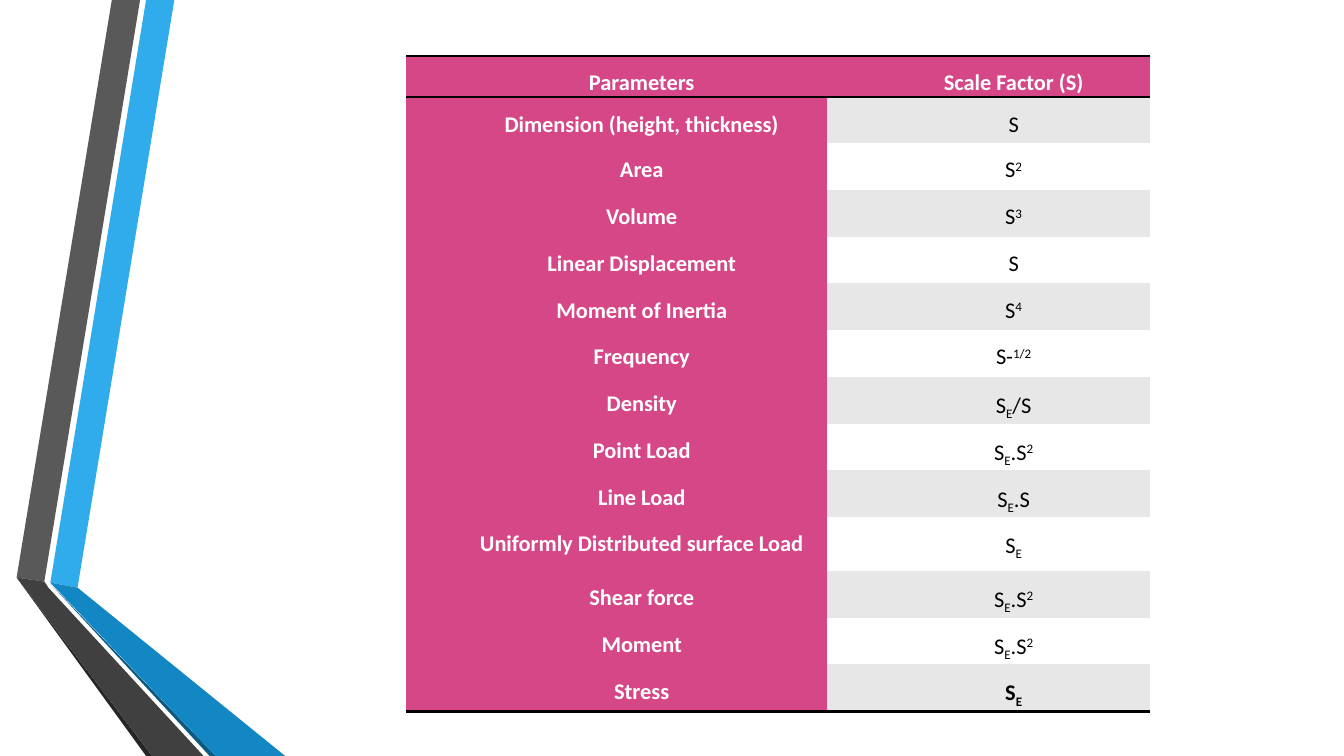
from dataclasses import dataclass

from lxml import etree
from pptx import Presentation
from pptx import util as u
from pptx.dml.color import RGBColor
from pptx.enum import text
from pptx.oxml import ns

PX = 4572
FONT = "Calibri"
PINK, GREY, WHITE, BLACK = "D64787", "E7E7E7", "FFFFFF", "000000"
NO_STYLE = "{2D5ABB26-0587-4C30-8999-92F81FD0307C}"


@dataclass(frozen=True)
class Band:
    color: str
    points: tuple[tuple[int, int], ...]


@dataclass(frozen=True)
class Piece:
    text: str
    baseline: int = 0


@dataclass(frozen=True)
class Parameter:
    name: str
    factor: tuple[Piece, ...]
    height: int = 93
    bold_factor: bool = False


BANDS = (
    Band("30ACEC", ((100, 1156), (154, 1166), (346, 0), (290, 0))),
    Band("595959", ((278, 0), (222, 0), (33, 1146), (88, 1154))),
    Band("262626", ((33, 1146), (290, 1500), (302, 1500))),
    Band("0C5A82", ((100, 1158), (416, 1500), (428, 1500))),
    Band("1287C3", ((100, 1156), (428, 1500), (566, 1500), (154, 1166))),
    Band("404040", ((404, 1500), (96, 1166), (88, 1154), (33, 1146), (302, 1500))),
)

S = Piece("S")
SUB_E = Piece("E", -25000)
DOT_S = Piece(".S")


def power(exponent: str) -> Piece:
    """Return a superscript piece."""
    return Piece(exponent, 30000)


S_E = (S, SUB_E)
LOAD = (*S_E, DOT_S, power("2"))
PARAMETERS = (
    Parameter("Parameters", (Piece("Scale Factor (S)"),), 78, True),
    Parameter("Dimension (height, thickness)", (S,), 91),
    Parameter("Area", (S, power("2"))),
    Parameter("Volume", (S, power("3"))),
    Parameter("Linear Displacement", (S,), 92),
    Parameter("Moment of Inertia", (S, power("4"))),
    Parameter("Frequency", (Piece("S-"), power("1/2"))),
    Parameter("Density", (*S_E, Piece("/S"))),
    Parameter("Point Load", LOAD),
    Parameter("Line Load", (*S_E, DOT_S), 92),
    Parameter("Uniformly Distributed surface Load", S_E, 107),
    Parameter("Shear force", LOAD),
    Parameter("Moment", LOAD),
    Parameter("Stress", S_E, bold_factor=True),
)


def px(length: int) -> u.Emu:
    """Turn px into EMU."""
    return u.Emu(length * PX)


def paint(target, color: str) -> None:
    """Give a shape or cell a solid fill."""
    target.fill.solid()
    target.fill.fore_color.rgb = RGBColor.from_string(color)


def draw_band(slide, band: Band) -> None:
    """Draw one folded ribbon face."""
    builder = slide.shapes.build_freeform(*band.points[0], scale=PX)
    builder.add_line_segments(band.points[1:], close=True)
    shape = builder.convert_to_shape()
    paint(shape, band.color)
    shape.line.fill.background()
    shape.shadow.inherit = False


def add_rules(cell, sides: str) -> None:
    """Add black 2 pt borders on the given sides, T before B."""
    properties = cell._tc.get_or_add_tcPr()
    for position, side in enumerate(sides):
        line = etree.Element(ns.qn(f"a:ln{side}"), w=str(u.Pt(2)))
        fill = etree.SubElement(line, ns.qn("a:solidFill"))
        etree.SubElement(fill, ns.qn("a:srgbClr"), val=BLACK)
        properties.insert(position, line)


def fill_cell(cell, pieces: tuple[Piece, ...], fill: str, color: str, bold: bool) -> None:
    """Write and format one table cell."""
    paint(cell, fill)
    cell.margin_left = cell.margin_right = px(14)
    cell.margin_top = cell.margin_bottom = 0
    paragraph = cell.text_frame.paragraphs[0]
    paragraph.alignment = text.PP_ALIGN.CENTER
    paragraph.line_spacing = 1.5
    properties = paragraph._p.get_or_add_pPr()
    properties.set("marL", "0")
    properties.set("indent", str(px(100)))
    font = paragraph.font
    font.name, font.size, font.bold = FONT, u.Pt(16), bold
    font.color.rgb = RGBColor.from_string(color)
    for piece in pieces:
        run = paragraph.add_run()
        run.text = piece.text
        run.font.name, run.font.size, run.font.bold = FONT, u.Pt(16), bold
        run.font.color.rgb = RGBColor.from_string(color)
        if piece.baseline:
            run._r.get_or_add_rPr().set("baseline", str(piece.baseline))


def draw_table(slide) -> None:
    """Draw the table of scale factors."""
    height = sum(parameter.height for parameter in PARAMETERS)
    table = slide.shapes.add_table(
        len(PARAMETERS), 2, px(806), px(111), px(1476), px(height)).table
    table.horz_banding = False
    table._tbl.tblPr.find(ns.qn("a:tableStyleId")).text = NO_STYLE
    for column, width in zip(table.columns, (835, 641)):
        column.width = px(width)
    last = len(PARAMETERS) - 1
    for index, parameter in enumerate(PARAMETERS):
        table.rows[index].height = px(parameter.height)
        name_cell, factor_cell = table.cell(index, 0), table.cell(index, 1)
        fill = PINK if index == 0 else GREY if index % 2 else WHITE
        color = BLACK if index else WHITE
        fill_cell(name_cell, (Piece(parameter.name),), PINK, WHITE, True)
        fill_cell(factor_cell, parameter.factor, fill, color, parameter.bold_factor)
        sides = {0: "TB", last: "B"}.get(index, "")
        for cell in (name_cell, factor_cell):
            add_rules(cell, sides)


def main() -> None:
    """Build the scale factor slide."""
    presentation = Presentation()
    presentation.slide_width, presentation.slide_height = px(2667), px(1500)
    slide = presentation.slides.add_slide(presentation.slide_layouts[6])
    for band in BANDS:
        draw_band(slide, band)
    draw_table(slide)
    presentation.save("out.pptx")


if __name__ == "__main__":
    main()
